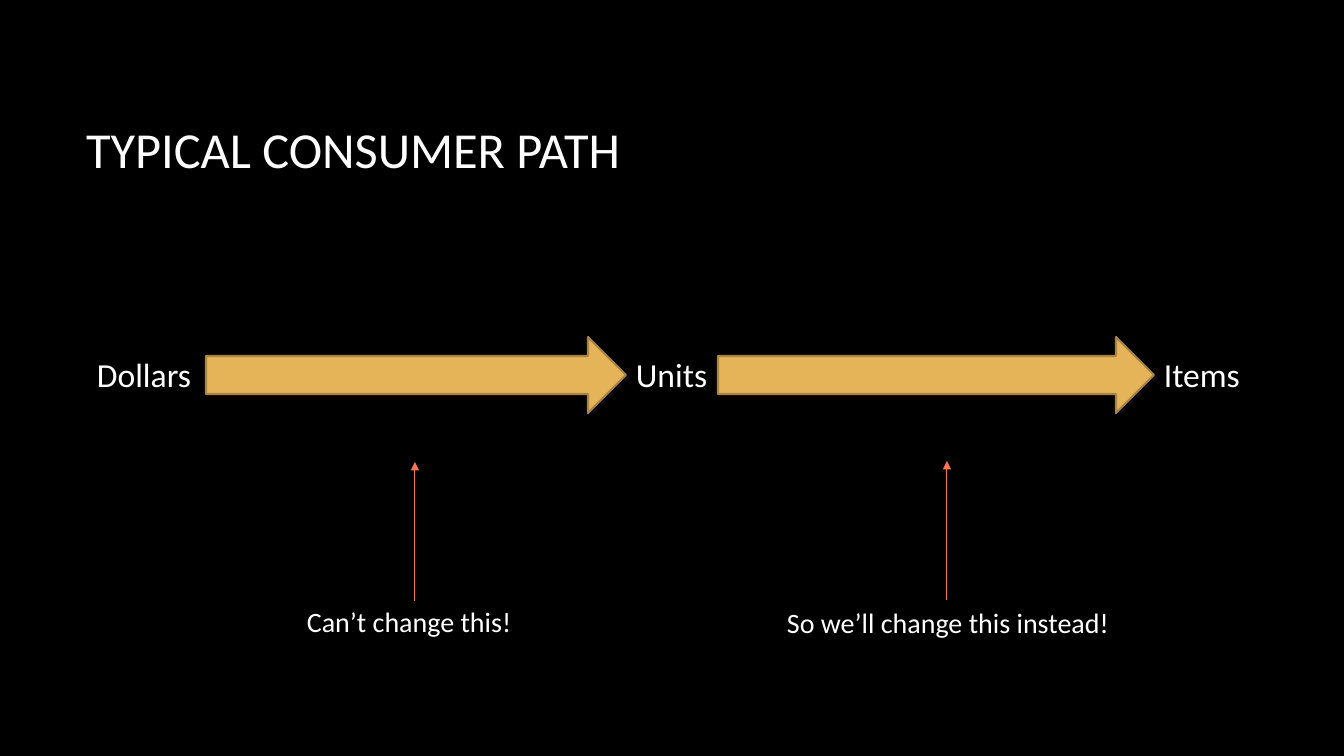
from lxml import etree
from pptx import Presentation
from pptx import util as u
from pptx.dml.color import RGBColor
from pptx.enum import shapes, text
from pptx.oxml.ns import qn

COLORS = {"background": "000000", "text": "FFFFFF", "gold": "E5B458",
          "gold_edge": "A98541", "coral": "F77754"}


def px(*lengths):
    return [u.Emu(round(length * 914400 / 100.8)) for length in lengths]


def write(box, words, size):
    frame = box.text_frame
    frame.text = words
    para = frame.paragraphs[0]
    para.alignment = text.PP_ALIGN.LEFT
    para.font.size = u.Pt(size)
    para.font.name = "Calibri"
    para.font.color.rgb = RGBColor.from_string(COLORS["text"])
    return frame


deck = Presentation()
deck.slide_width, deck.slide_height = px(1344, 756)
page = deck.slides.add_slide(deck.slide_layouts[5])
page.background.fill.solid()
page.background.fill.fore_color.rgb = RGBColor.from_string(COLORS["background"])

# Title
title = page.shapes.title
title.left, title.top, title.width, title.height = px(76, 68, 1117, 160)
frame = write(title, "TYPICAL CONSUMER PATH", 36)
frame.vertical_anchor = text.MSO_ANCHOR.MIDDLE

# Stages and notes: words, left, top, width, height, size
labels = [
    ("Dollars", 87, 349, 119, 50, 24),
    ("Units", 626, 349, 93, 50, 24),
    ("Items", 1154, 349, 97, 50, 24),
    ("Can’t change this!", 297, 600, 237, 44, 20),
    ("So we’ll change this instead!", 777, 601, 346, 44, 20),
]
for words, left, top, width, height, size in labels:
    box = page.shapes.add_textbox(*px(left, top, width, height))
    write(box, words, size).word_wrap = False

# Thin arrows from the notes up to the path
for x, bottom, top in [(415, 601, 462), (947, 600, 461)]:
    pointer = page.shapes.add_connector(
        shapes.MSO_CONNECTOR.STRAIGHT, *px(x, bottom, x, top))
    pointer.line.color.rgb = RGBColor.from_string(COLORS["coral"])
    pointer.line.width = u.Pt(0.75)
    etree.SubElement(pointer.line._get_or_add_ln(), qn("a:tailEnd"), type="triangle")
    etree.SubElement(pointer._element.spPr, qn("a:effectLst"))

# Block arrows between the stages
for left, width in [(206, 420), (718, 436)]:
    arrow = page.shapes.add_shape(
        shapes.MSO_SHAPE.RIGHT_ARROW, *px(left, 337, width, 76))
    arrow.shadow.inherit = False
    arrow.fill.solid()
    arrow.fill.fore_color.rgb = RGBColor.from_string(COLORS["gold"])
    arrow.line.color.rgb = RGBColor.from_string(COLORS["gold_edge"])
    arrow.line.width = u.Pt(1.5)

deck.save("out.pptx")
